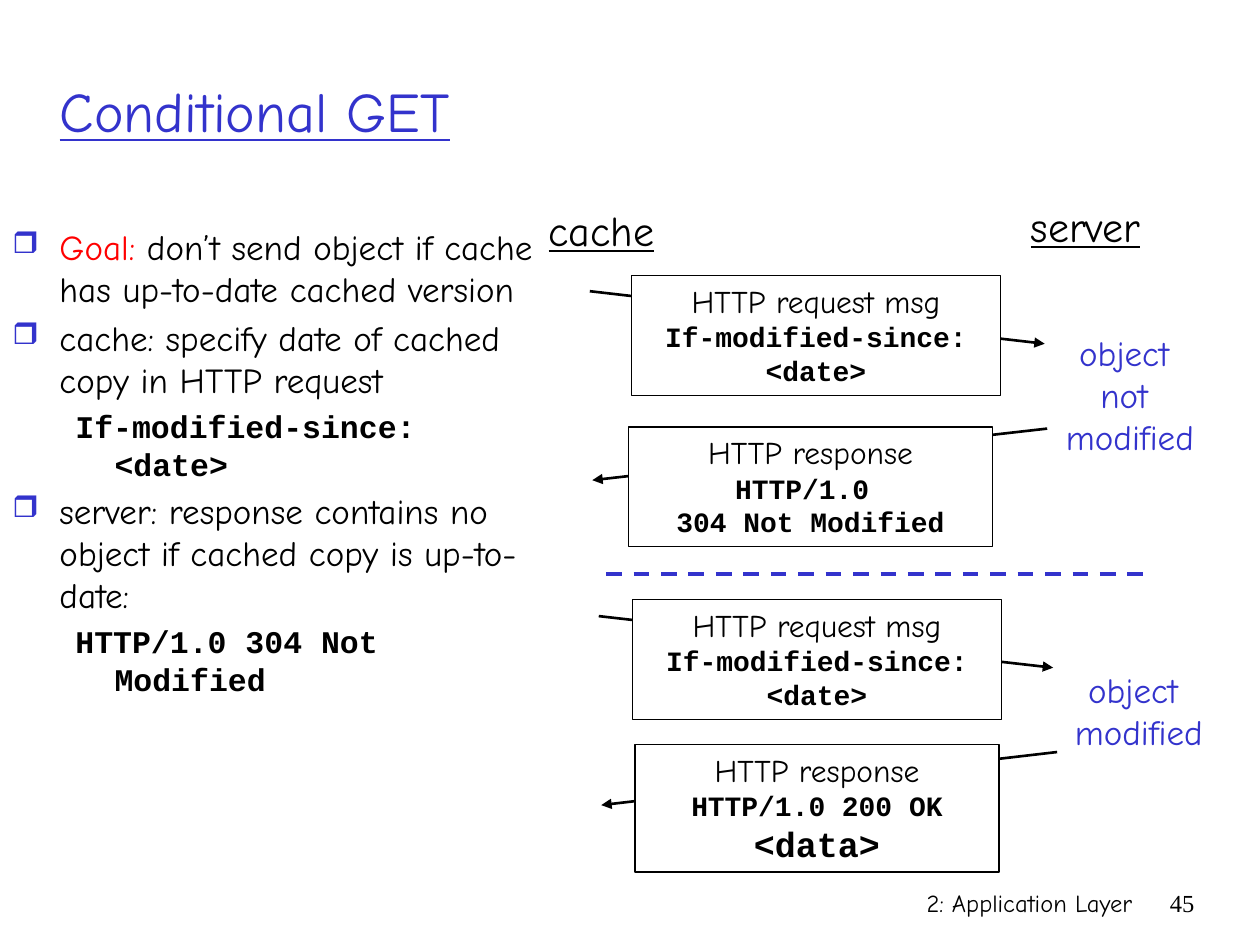
from dataclasses import dataclass

from lxml.etree import SubElement
from pptx import Presentation
from pptx.dml.color import RGBColor
from pptx.enum.dml import MSO_LINE_DASH_STYLE as Dash
from pptx.enum.shapes import MSO_CONNECTOR as Connector, MSO_SHAPE as Shape
from pptx.enum.text import MSO_ANCHOR as Anchor, PP_ALIGN as Align
from pptx.oxml.ns import qn
from pptx.util import Cm, Pt


@dataclass(frozen=True)
class Theme:
    ink: str = "000000"
    paper: str = "FFFFFF"
    accent: str = "3333CC"
    alert: str = "FF0000"
    hand: str = "Comic Neue"
    code: str = "Courier New"
    number: str = "Times New Roman"
    title: int = 32
    heading: int = 24
    body: int = 20
    label: int = 18
    header: int = 16
    footer: int = 14


class SlideBuilder:
    def __init__(self, slide, theme):
        self.slide = slide
        self.theme = theme

    def style(self, font, size, color=None, face=None, bold=False, underline=False):
        font.size = Pt(size)
        font.name = face or self.theme.hand
        font.bold = bold
        font.underline = underline
        font.color.rgb = RGBColor.from_string(color or self.theme.ink)

    def title(self, text, *place):
        heading = self.slide.shapes.title
        heading.left, heading.top, heading.width, heading.height = map(Cm, place)
        frame = heading.text_frame
        frame.vertical_anchor = Anchor.MIDDLE
        frame.text = text
        frame.paragraphs[0].alignment = Align.LEFT
        self.style(frame.paragraphs[0].font, self.theme.title, self.theme.accent, underline=True)

    def fill_lines(self, frame, lines, align):
        """Each line is (text, style options)."""
        for index, (text, options) in enumerate(lines):
            line = frame.add_paragraph() if index else frame.paragraphs[0]
            line.text = text
            line.alignment = align
            self.style(line.font, **options)

    def text(self, lines, *place, align=Align.CENTER, wrap=False):
        box = self.slide.shapes.add_textbox(*map(Cm, place))
        box.text_frame.word_wrap = wrap
        self.fill_lines(box.text_frame, lines, align)

    def line(self, start, end, color, width):
        connector = self.slide.shapes.add_connector(
            Connector.STRAIGHT, *map(Cm, (*start, *end)))
        connector.line.color.rgb = RGBColor.from_string(color)
        connector.line.width = Pt(width)
        SubElement(connector._element.spPr, qn("a:effectLst"))
        return connector

    def arrow(self, start, end):
        connector = self.line(start, end, self.theme.ink, 1.5)
        SubElement(connector.line._get_or_add_ln(), qn("a:tailEnd"), type="triangle")

    def divider(self, start, end):
        self.line(start, end, self.theme.accent, 2.25).line.dash_style = Dash.DASH

    def message(self, start, end, place, lines):
        """An arrow with its message box lying over it."""
        self.arrow(start, end)
        box = self.slide.shapes.add_shape(Shape.RECTANGLE, *map(Cm, place))
        box.shadow.inherit = False
        box.fill.solid()
        box.fill.fore_color.rgb = RGBColor.from_string(self.theme.paper)
        box.line.color.rgb = RGBColor.from_string(self.theme.ink)
        box.line.width = Pt(0.75)
        box.text_frame.word_wrap = True
        box.text_frame.vertical_anchor = Anchor.TOP
        self.fill_lines(box.text_frame, lines, Align.CENTER)

    def bullet(self, properties):
        color = SubElement(properties, qn("a:buClr"))
        SubElement(color, qn("a:srgbClr"), val=self.theme.accent)
        SubElement(properties, qn("a:buSzPct"), val="85000")
        SubElement(properties, qn("a:buChar"), char="❒")

    def points(self, items, *place):
        """Each item is (text, is code, highlighted opening words)."""
        frame = self.slide.shapes.add_textbox(*map(Cm, place)).text_frame
        frame.word_wrap = True
        for index, (text, is_code, opening) in enumerate(items):
            point = frame.add_paragraph() if index else frame.paragraphs[0]
            size = self.theme.label if is_code else self.theme.body
            point.space_before = Pt(size * 0.2)
            properties = point._p.get_or_add_pPr()
            margin, hanging = (2.06, 0.79) if is_code else (0.95, 0.95)
            properties.set("marL", str(Cm(margin)))
            properties.set("indent", str(-Cm(hanging)))
            if is_code:
                self.style(point.font, size, face=self.theme.code, bold=True)
            else:
                self.bullet(properties)
                self.style(point.font, size)
            if opening:
                goal = point.add_run()
                goal.text = opening
                goal.font.color.rgb = RGBColor.from_string(self.theme.alert)
            point.add_run().text = text


def main():
    deck = Presentation()
    deck.slide_width, deck.slide_height = Cm(25.4), Cm(19.05)
    theme = Theme()
    page = SlideBuilder(deck.slides.add_slide(deck.slide_layouts[5]), theme)

    heading = dict(size=theme.heading, underline=True)
    label = dict(size=theme.label)
    header = dict(size=theme.header, face=theme.code, bold=True)
    data = dict(header, size=theme.body)
    outcome = dict(size=theme.body, color=theme.accent)

    # Footer and title
    page.text([("2: Application Layer", dict(size=theme.footer))],
              15.04, 17.78, 8.04, 1.27, align=Align.RIGHT, wrap=True)
    page.text([("45", dict(size=theme.footer, face=theme.number))],
              23.06, 17.78, 1.27, 1.27, align=Align.RIGHT, wrap=True)
    page.title("Conditional GET", 0.95, 0.64, 22.12, 3.18)

    # Explanation on the left
    page.points([
        (" don’t send object if cache has up-to-date cached version", False, "Goal:"),
        ("cache: specify date of cached copy in HTTP request", False, ""),
        ("If-modified-since: <date>", True, ""),
        ("server: response contains no object if cached copy is up-to-date:", False, ""),
        ("HTTP/1.0 304 Not Modified", True, ""),
    ], 0, 4.42, 11.23, 11.96)

    # The two parties
    page.text([("cache", heading)], 10.74, 3.99, 2.77, 1.27)
    page.text([("server", heading)], 20.35, 3.91, 3.07, 1.27)

    request = [("HTTP request msg", label), ("If-modified-since: <date>", header)]

    # Exchange when the object is not modified
    page.message((11.89, 5.87), (21.06, 6.93), (12.73, 5.56, 7.44, 2.41), request)
    page.message((21.11, 8.64), (11.94, 9.68), (12.67, 8.61, 7.34, 2.41),
                 [("HTTP response", label), ("HTTP/1.0 ", header),
                  ("304 Not Modified", header)])
    page.text([("object ", outcome), ("not ", outcome), ("modified", outcome)],
              21.08, 6.55, 3.4, 2.79)

    page.divider((12.22, 11.58), (23.06, 11.58))

    # Exchange when the object is modified
    page.message((12.07, 12.42), (21.23, 13.46), (12.75, 12.09, 7.44, 2.41), request)
    page.message((21.31, 15.16), (12.12, 16.23), (12.8, 15.01, 7.34, 2.57),
                 [("HTTP response", label), ("HTTP/1.0 200 OK", header),
                  ("<data>", data)])
    page.text([("object ", outcome), ("modified", outcome)], 21.26, 13.36, 3.4, 1.96)

    deck.save("out.pptx")


if __name__ == "__main__":
    main()
